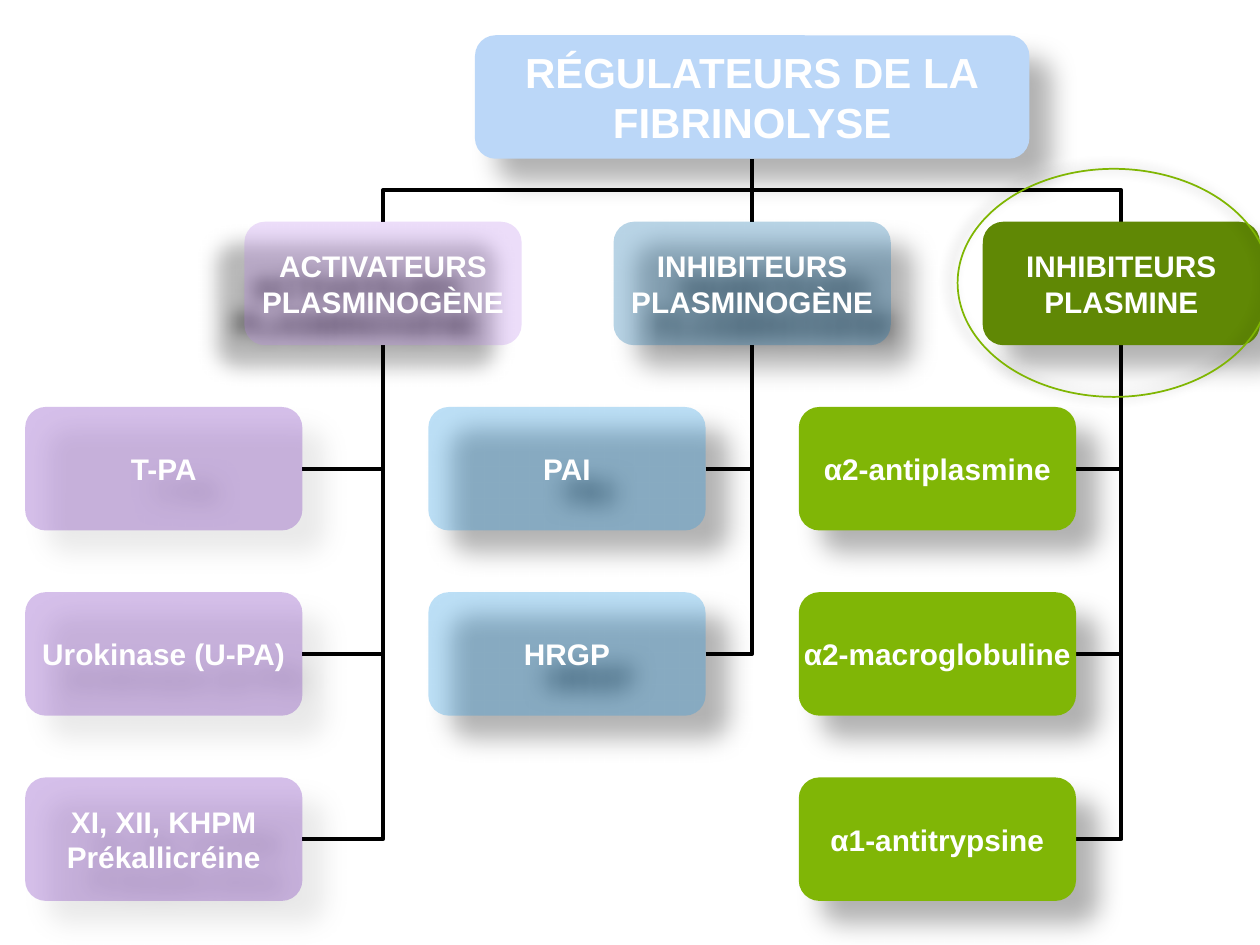
from lxml.etree import SubElement
from pptx import Presentation
from pptx.dml.color import RGBColor
from pptx.enum.shapes import MSO_CONNECTOR as Link, MSO_SHAPE as Shape
from pptx.enum.text import MSO_ANCHOR as Anchor, PP_ALIGN as Align
from pptx.oxml.ns import qn
from pptx.util import Inches, Pt

COLORS = {
    "root": "BBD7F8", "activator": "BB85EC", "activator_leaf": "6A1BB4",
    "inhibitor": "1772AD", "inhibitor_leaf": "2397E2",
    "plasmin": "608805", "plasmin_leaf": "80B606",
    "ring": "7FB602", "line": "000000", "text": "FFFFFF",
}
BOX_W, BOX_H = 2.2, 0.98
ROOT_LEFT, ROOT_TOP, ROOT_W = 3.77, 0.28, 4.4
BRANCH_TOP, ROW_STEP = 1.76, 1.47

# Shadows: opacity %, blur pt, distance pt, direction in degrees
SOFT = (30, 15, 18, 45)
STRONG = (100, 15, 18, 45)
STRONG_LEFT = (100, 11.8, 19.7, 141)
FAINT = (35, 7, 4, 190)

# Branch left, leaf left, label, colour, opacity, branch shadow, leaf shadow, leaves
BRANCHES = [
    (1.94, 0.2, "ACTIVATEURS\nPLASMINOGÈNE", "activator", 28, STRONG_LEFT, SOFT,
     ["T-PA", "Urokinase (U-PA)", "XI, XII, KHPM\nPrékallicréine"]),
    (4.87, 3.4, "INHIBITEURS\nPLASMINOGÈNE", "inhibitor", 30, STRONG, STRONG,
     ["PAI", "HRGP"]),
    (7.8, 6.34, "INHIBITEURS\nPLASMINE", "plasmin", 100, SOFT, SOFT,
     ["α2-antiplasmine", "α2-macroglobuline", "α1-antitrypsine"]),
]


def rgb(name):
    return RGBColor.from_string(COLORS[name])


def add_shadow(shape, opacity, blur, distance, direction):
    shape.shadow.inherit = False
    effects = shape._element.spPr.find(qn("a:effectLst"))
    outer = SubElement(effects, qn("a:outerShdw"), blurRad=str(Pt(blur)),
                       dist=str(Pt(distance)), dir=str(direction * 60000),
                       algn="ctr", rotWithShape="0")
    color = SubElement(outer, qn("a:srgbClr"), val="000000")
    SubElement(color, qn("a:alpha"), val=str(opacity * 1000))


def add_box(page, left, top, width, label, color, opacity=100, shadow=SOFT, size=17):
    box = page.shapes.add_shape(Shape.ROUNDED_RECTANGLE, Inches(left), Inches(top),
                                Inches(width), Inches(BOX_H))
    box.fill.solid()
    box.fill.fore_color.rgb = rgb(color)
    if opacity < 100:
        fill = box._element.spPr.find(qn("a:solidFill"))
        SubElement(fill[0], qn("a:alpha"), val=str(opacity * 1000))
    box.line.fill.background()
    add_shadow(box, *shadow)
    frame = box.text_frame
    frame.margin_left = frame.margin_right = frame.margin_top = frame.margin_bottom = 0
    frame.word_wrap = False
    frame.vertical_anchor = Anchor.MIDDLE
    frame.text = label
    for para in frame.paragraphs:
        para.alignment = Align.CENTER
        para.font.name, para.font.size, para.font.bold = "Arial", Pt(size), True
        para.font.color.rgb = rgb("text")
    return box


def add_link(page, kind, *ends):
    link = page.shapes.add_connector(kind, *map(Inches, ends))
    link.line.color.rgb = rgb("line")
    link.line.width = Pt(2.25)
    SubElement(link._element.spPr, qn("a:effectLst"))
    return link


def link_to_root(page, branch_x, root_x):
    """Rise from a side branch, cross halfway, and rise to the root."""
    root_bottom = ROOT_TOP + BOX_H
    middle_x, middle_y = (branch_x + root_x) / 2, (BRANCH_TOP + root_bottom) / 2
    half_rise, half_run = (BRANCH_TOP - root_bottom) / 2, (branch_x - root_x) / 2
    link = add_link(page, Link.ELBOW, middle_x - half_rise, middle_y + half_run,
                    middle_x + half_rise, middle_y - half_run)
    link._element.spPr.find(qn("a:xfrm")).set("rot", str(270 * 60000))


def link_leaf(page, leaf_right, leaf_middle, branch_x):
    link = add_link(page, Link.ELBOW, leaf_right, leaf_middle,
                    branch_x, BRANCH_TOP + BOX_H)
    link._element.spPr.find(qn("a:prstGeom")).set("prst", "bentConnector2")


def add_links(page):
    """Draw all lines behind the boxes; return the one to the middle branch."""
    root_x = ROOT_LEFT + ROOT_W / 2
    straight = None
    for left, leaf_left, *_, leaves in BRANCHES:
        branch_x = left + BOX_W / 2
        for row in range(len(leaves), 0, -1):
            middle = BRANCH_TOP + row * ROW_STEP + BOX_H / 2
            link_leaf(page, leaf_left + BOX_W, middle, branch_x)
        if abs(branch_x - root_x) < 0.01:
            straight = add_link(page, Link.STRAIGHT, branch_x, BRANCH_TOP,
                                root_x, ROOT_TOP + BOX_H)
        else:
            link_to_root(page, branch_x, root_x)
    return straight


def add_branch(page, left, leaf_left, label, color, opacity, shadow, leaf_shadow, leaves):
    branch = add_box(page, left, BRANCH_TOP, BOX_W, label, color, opacity, shadow)
    for row, leaf in enumerate(leaves, 1):
        add_box(page, leaf_left, BRANCH_TOP + row * ROW_STEP, BOX_W, leaf,
                color + "_leaf", opacity, leaf_shadow)
    return branch


def add_ring(page, left, top, width, height):
    ring = page.shapes.add_shape(Shape.OVAL, Inches(left), Inches(top),
                                 Inches(width), Inches(height))
    ring.fill.background()
    ring.line.color.rgb = rgb("ring")
    ring.line.width = Pt(1)
    add_shadow(ring, *FAINT)


def main():
    deck = Presentation()
    deck.slide_width, deck.slide_height = Inches(10), Inches(7.5)
    page = deck.slides.add_slide(deck.slide_layouts[6])
    straight = add_links(page)
    root = add_box(page, ROOT_LEFT, ROOT_TOP, ROOT_W,
                   "RÉGULATEURS DE LA\nFIBRINOLYSE", "root", size=24)
    branches = [add_branch(page, *branch) for branch in BRANCHES]
    straight.begin_connect(branches[1], 0)
    straight.end_connect(root, 2)
    add_ring(page, 7.6, 1.34, 2.48, 1.81)
    deck.save("out.pptx")


if __name__ == "__main__":
    main()
